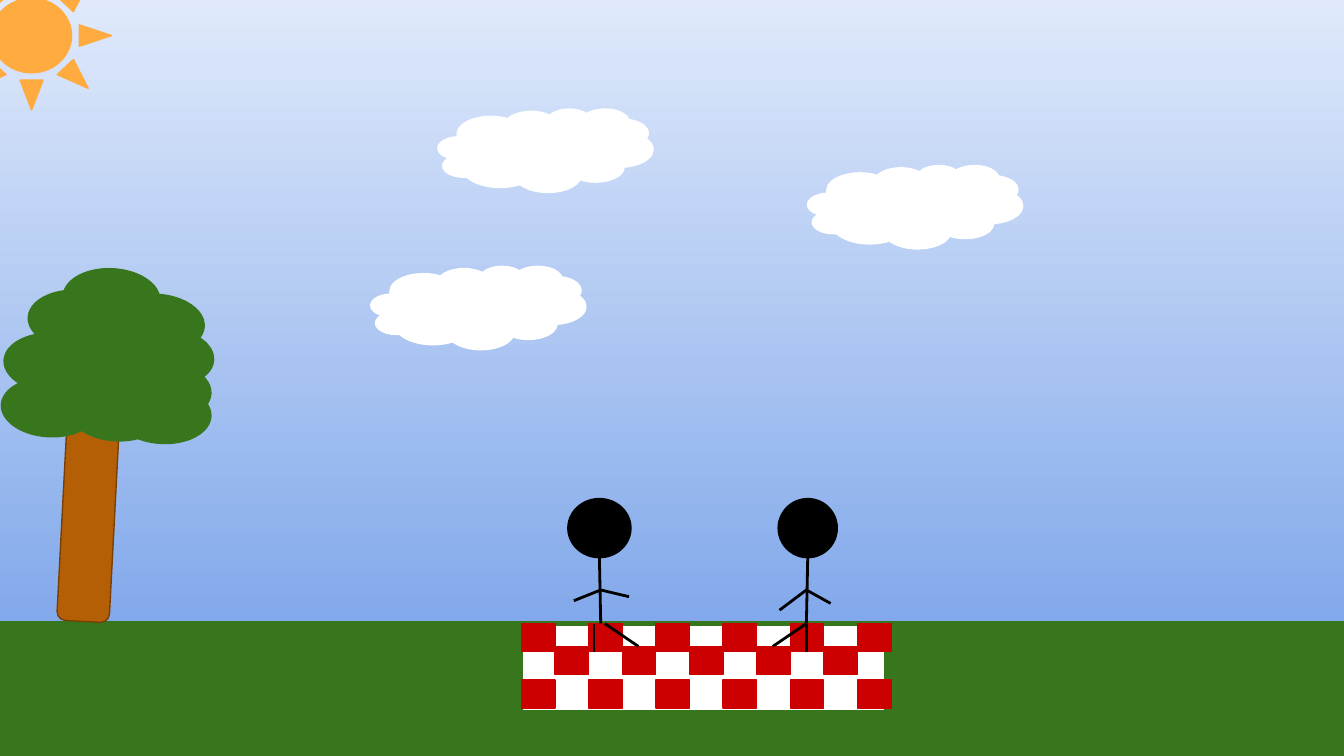
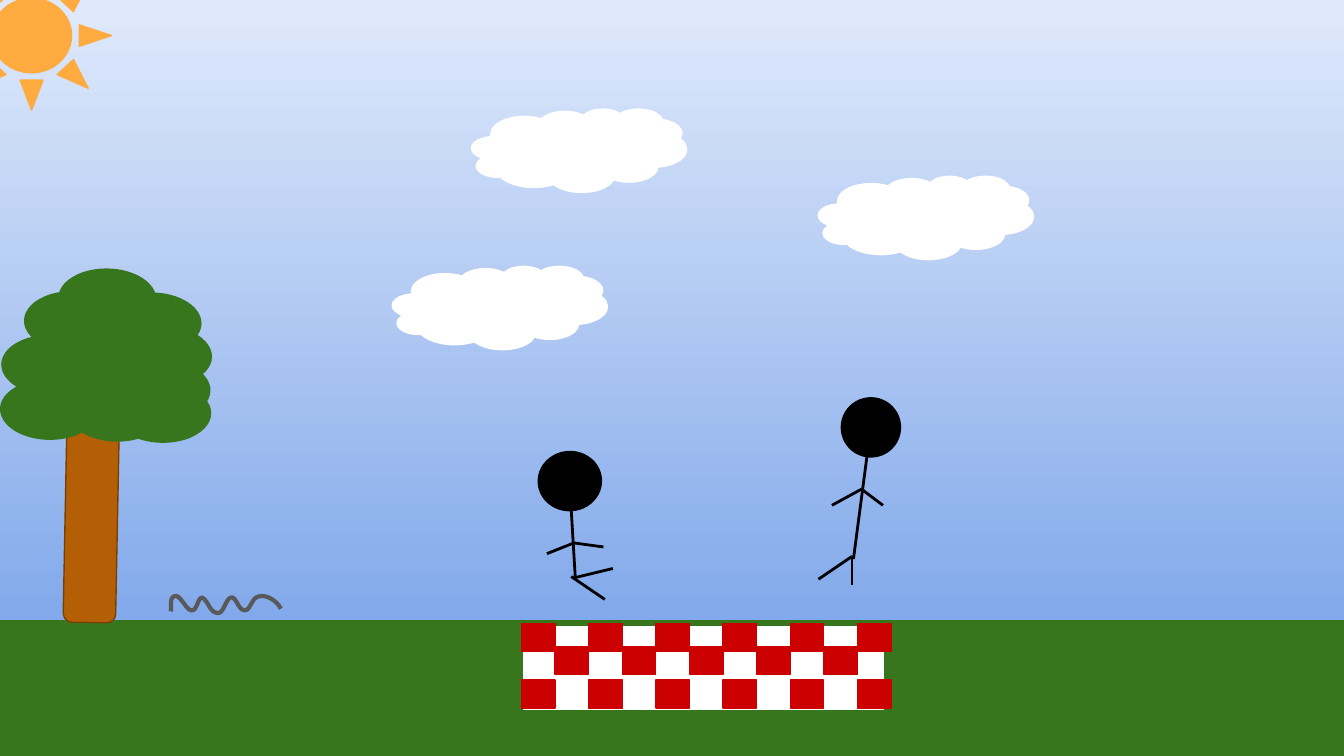
from itertools import pairwise
from math import cos, radians, sin

from lxml.etree import SubElement
from pptx import Presentation
from pptx.dml.color import RGBColor
from pptx.enum.shapes import MSO_CONNECTOR, MSO_SHAPE
from pptx.oxml.ns import qn
from pptx.util import Inches, Pt

COLUMNS = 10
ROWS = COLUMNS * 9 / 16
UNIT = Inches(1)

SKY_TOP = RGBColor(0xDF, 0xE9, 0xFB)
SKY_BOTTOM = RGBColor(0x6E, 0x9B, 0xE7)
GREEN = RGBColor(0x38, 0x76, 0x1D)
TRUNK = RGBColor(0xB4, 0x5F, 0x06)
BARK = RGBColor(0x78, 0x3F, 0x04)
RED = RGBColor(0xCC, 0x00, 0x00)
WHITE = RGBColor(0xFF, 0xFF, 0xFF)
BLACK = RGBColor(0x00, 0x00, 0x00)
SUN = RGBColor(0xFF, 0xAB, 0x40)
GRAY = RGBColor(0x59, 0x59, 0x59)

TREE_TILT = 3
TREE_PIVOT = (0.9, 3.18)
TRUNK_CENTER = (0.66, 3.79)
LEAF_CENTERS = [
    (0.37, 3.03), (0.87, 3.06), (0.64, 2.71), (1.06, 2.73),
    (0.39, 2.7), (1.21, 2.91), (1.23, 2.66), (0.82, 2.55),
    (1.16, 2.41), (0.57, 2.38), (1.21, 3.08), (0.83, 2.22),
]
WORM_START = (1.27, 4.55)
WORM_CURVES = [
    ((1.28, 4.52), (1.26, 4.46), (1.29, 4.44)),
    ((1.34, 4.4), (1.39, 4.57), (1.44, 4.54)),
    ((1.47, 4.52), (1.48, 4.43), (1.51, 4.45)),
    ((1.55, 4.48), (1.56, 4.55), (1.61, 4.56)),
    ((1.66, 4.58), (1.67, 4.48), (1.71, 4.45)),
    ((1.75, 4.42), (1.77, 4.53), (1.81, 4.54)),
    ((1.86, 4.56), (1.87, 4.45), (1.92, 4.44)),
    ((1.98, 4.42), (2.06, 4.47), (2.09, 4.53)),
]


def units(*lengths):
    """Turn grid lengths into slide lengths."""
    return [round(length * UNIT) for length in lengths]


def add_figure(slide, kind, box, fill, line=None, tilt=0):
    """Add a filled preset shape at left, top, width, height."""
    shape = slide.shapes.add_shape(kind, *units(*box))
    shape.shadow.inherit = False
    shape.fill.solid()
    shape.fill.fore_color.rgb = fill
    shape.line.color.rgb = line or fill
    shape.line.width = Pt(0.75)
    shape.rotation = tilt
    return shape


def add_centered(slide, kind, center, size, fill, line=None, tilt=0):
    """Add a preset shape around its center."""
    corner = [middle - length / 2 for middle, length in zip(center, size)]
    return add_figure(slide, kind, (*corner, *size), fill, line, tilt)


def add_limbs(slide, points):
    """Draw black straight strokes through successive points."""
    for start, end in pairwise(points):
        connector = slide.shapes.add_connector(
            MSO_CONNECTOR.STRAIGHT, *units(*start, *end))
        connector.line.color.rgb = BLACK
        connector.line.width = Pt(1.5)
        SubElement(connector._element.spPr, qn("a:effectLst"))


def add_person(slide, head, width, strokes, tilt=0):
    """Draw a stick person with a round head."""
    face = add_centered(slide, MSO_SHAPE.SMILEY_FACE, head, (width, 0.44),
                        BLACK, tilt=tilt)
    face.adjustments[0] = 0.047
    for points in strokes:
        add_limbs(slide, points)


def turn(point, pivot, degrees):
    """Rotate a point clockwise about a pivot."""
    angle = radians(degrees)
    across, down = point[0] - pivot[0], point[1] - pivot[1]
    return (pivot[0] + across * cos(angle) - down * sin(angle),
            pivot[1] + across * sin(angle) + down * cos(angle))


def add_tree(slide, tilt):
    """Draw the trunk and leaves, leaning by the tilt."""
    sway = tilt - TREE_TILT
    add_centered(slide, MSO_SHAPE.ROUNDED_RECTANGLE,
                 turn(TRUNK_CENTER, TREE_PIVOT, sway), (0.39, 1.67),
                 TRUNK, BARK, tilt)
    for center in LEAF_CENTERS:
        add_centered(slide, MSO_SHAPE.OVAL, turn(center, TREE_PIVOT, sway),
                     (0.72, 0.44), GREEN, tilt=tilt)


def add_blanket(slide):
    """Draw the white blanket with its red checks."""
    add_figure(slide, MSO_SHAPE.RECTANGLE, (3.9, 4.66, 2.67, 0.62), WHITE)
    for column in range(11):
        for top in ((4.81,) if column % 2 else (5.06, 4.64)):
            add_figure(slide, MSO_SHAPE.RECTANGLE,
                       (3.88 + 0.25 * column, top, 0.25, 0.21), RED)


def add_sky(slide, clouds):
    """Draw the clouds and the sun."""
    for corner in clouds:
        add_figure(slide, MSO_SHAPE.CLOUD, (*corner, 1.6, 0.62), WHITE)
    add_figure(slide, MSO_SHAPE.SUN, (-0.36, -0.29, 1.19, 1.11), SUN)


def curve_points(controls, steps=8):
    """Sample a cubic curve, leaving out its start."""
    for step in range(1, steps + 1):
        share = step / steps
        rest = 1 - share
        weights = (rest ** 3, 3 * rest ** 2 * share,
                   3 * rest * share ** 2, share ** 3)
        yield tuple(sum(weight * value for weight, value in zip(weights, axis))
                    for axis in zip(*controls))


def add_worm(slide):
    """Draw the wavy gray worm."""
    start, points = WORM_START, []
    for curve in WORM_CURVES:
        points.extend(curve_points((start, *curve)))
        start = curve[-1]
    builder = slide.shapes.build_freeform(*units(*WORM_START))
    builder.add_line_segments([units(*point) for point in points], close=False)
    worm = builder.convert_to_shape()
    worm.shadow.inherit = False
    worm.fill.background()
    worm.line.color.rgb = GRAY
    worm.line.width = Pt(2.25)


def paint_background(slide):
    """Give the slide the sky gradient."""
    fill = slide.background.fill
    fill.gradient()
    fill.gradient_angle = 270
    for stop, color, position in zip(
            fill.gradient_stops, (SKY_TOP, SKY_BOTTOM), (0, 1)):
        stop.color.rgb = color
        stop.position = position


def add_scene(presentation, ground, tilt, people, clouds):
    """Add a picnic slide and return it."""
    slide = presentation.slides.add_slide(presentation.slide_layouts[6])
    paint_background(slide)
    add_figure(slide, MSO_SHAPE.RECTANGLE, (0, ground, COLUMNS, 1), GREEN)
    add_tree(slide, tilt)
    add_blanket(slide)
    for person in people:
        add_person(slide, **person)
    add_sky(slide, clouds)
    return slide


def main():
    """Build both scenes and save them."""
    presentation = Presentation()
    presentation.slide_width, presentation.slide_height = units(COLUMNS, ROWS)

    sitting = [
        dict(head=(6.01, 3.93), width=0.44, strokes=[
            [(6.01, 4.15), (6, 4.64), (5.75, 4.81)],
            [(6, 4.64), (6, 4.85)],
            [(6.18, 4.49), (6, 4.39), (5.8, 4.54)]]),
        dict(head=(4.46, 3.93), width=0.47, strokes=[
            [(4.46, 4.15), (4.47, 4.64)],
            [(4.27, 4.47), (4.47, 4.39), (4.68, 4.44)],
            [(4.5, 4.64), (4.75, 4.81)],
            [(4.42, 4.64), (4.42, 4.85)]]),
    ]
    add_scene(presentation, 4.63, TREE_TILT, sitting,
              [(3.26, 0.81), (6.01, 1.23), (2.76, 1.98)])

    jumping = [
        dict(head=(6.48, 3.18), width=0.44, tilt=8.3, strokes=[
            [(6.45, 3.4), (6.35, 4.16)],
            [(6.34, 4.14), (6.09, 4.31)],
            [(6.34, 4.14), (6.34, 4.35)],
            [(6.57, 3.76), (6.41, 3.64), (6.19, 3.76)]]),
        dict(head=(4.24, 3.58), width=0.47, tilt=357, strokes=[
            [(4.25, 3.79), (4.28, 4.29)],
            [(4.07, 4.12), (4.27, 4.04), (4.49, 4.07)],
            [(4.25, 4.29), (4.5, 4.46)],
            [(4.27, 4.3), (4.56, 4.23)]]),
    ]
    slide = add_scene(presentation, 4.62, 1.1, jumping,
                      [(3.51, 0.81), (6.09, 1.31), (2.92, 1.98)])
    add_worm(slide)
    presentation.save("out.pptx")


if __name__ == "__main__":
    main()
